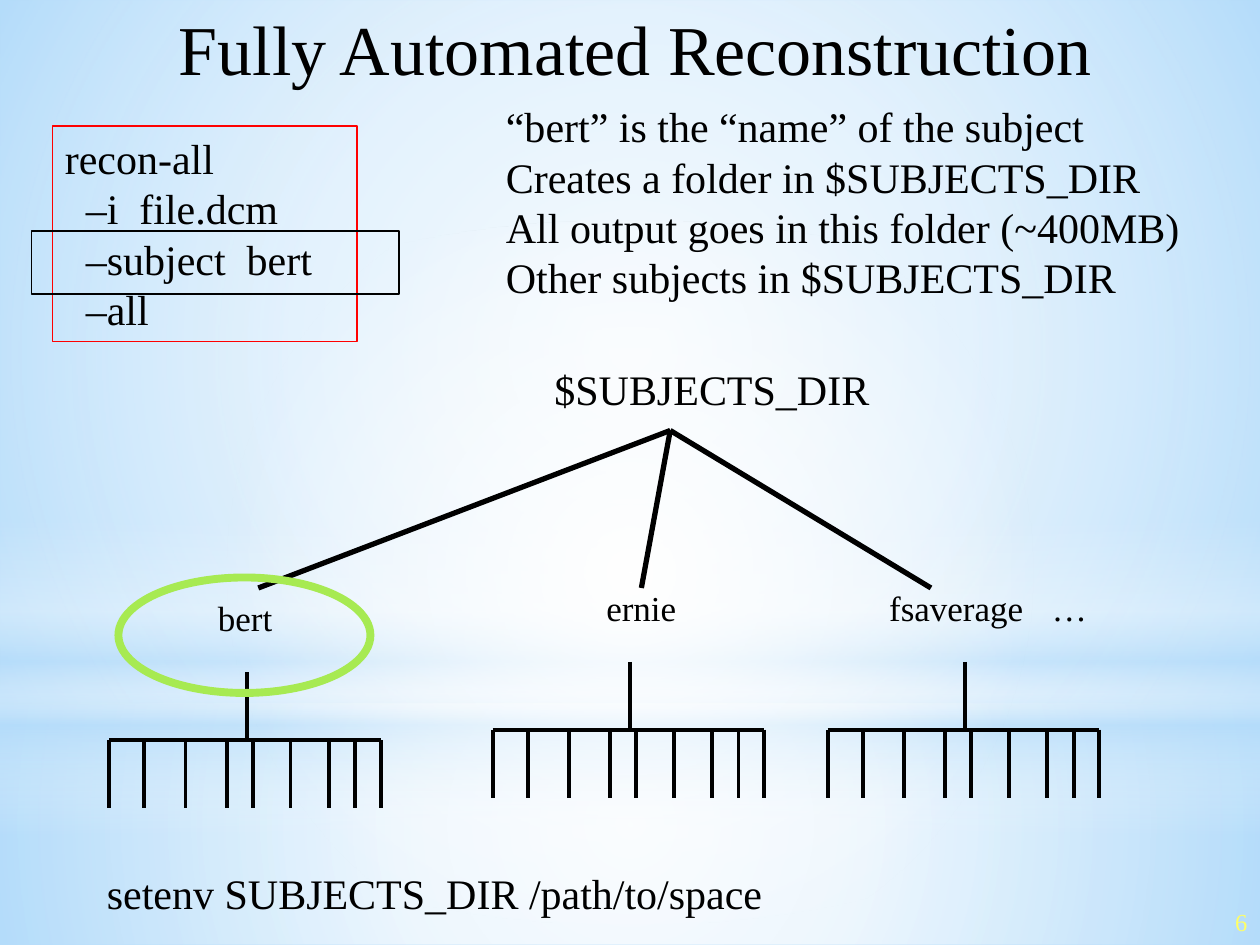
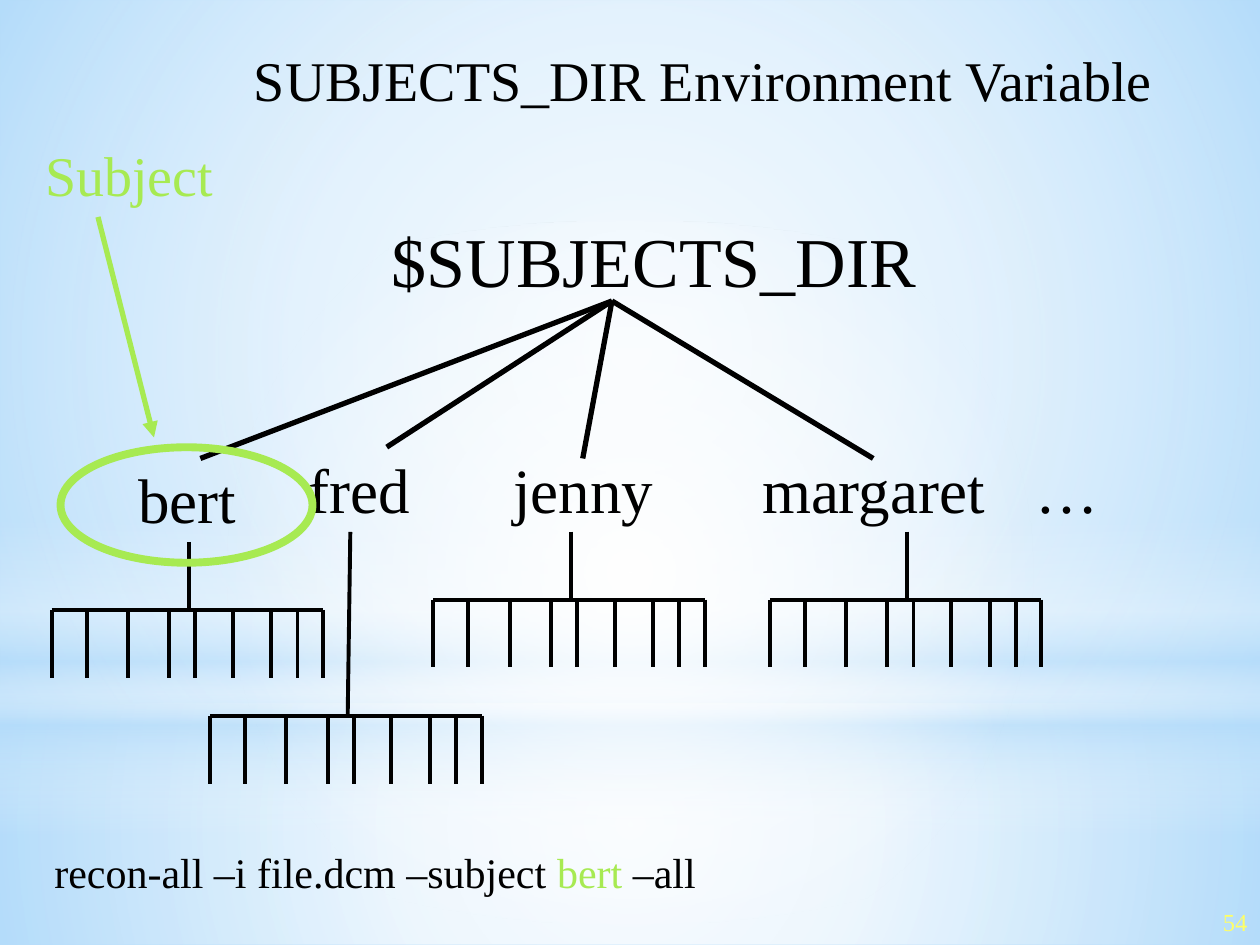
from lxml.etree import SubElement
from pptx import Presentation
from pptx.dml.color import RGBColor
from pptx.enum.shapes import MSO_CONNECTOR, MSO_SHAPE
from pptx.enum.text import MSO_ANCHOR as ANCHOR, MSO_AUTO_SIZE, PP_ALIGN as ALIGN
from pptx.oxml import parse_xml
from pptx.oxml.ns import nsdecls, qn
from pptx.util import Pt

COLORS = {
    "sky": "B4DCFA", "white": "FFFFFF", "ink": "000000",
    "red": "FF0000", "green": "A7EA52", "number": "FFFF66",
}
RGB = {name: RGBColor.from_string(value) for name, value in COLORS.items()}
FONT = "Times New Roman"
TITLE_ONLY = 5


def write(sp, lines, size, color="ink", align=ALIGN.LEFT, anchor=ANCHOR.TOP,
          spacing=None, tab=None):
    """Fill a shape with one paragraph per line; spacing defaults to 1.2 times the size."""
    tf = sp.text_frame
    tf.word_wrap = True
    tf.auto_size = MSO_AUTO_SIZE.NONE
    tf.vertical_anchor = anchor
    for i, line in enumerate(lines):
        p = tf.add_paragraph() if i else tf.paragraphs[0]
        p.text = line
        p.alignment = align
        p.line_spacing = spacing or Pt(size * 1.2)
        if tab:
            tabs = SubElement(p._p.get_or_add_pPr(), qn("a:tabLst"))
            SubElement(tabs, qn("a:tab"), pos=str(Pt(tab)), algn="l")
        p.font.name = FONT
        p.font.size = Pt(size)
        p.font.color.rgb = RGB[color]
    return tf


def add_line(slide, start, end, width, color="ink"):
    line = slide.shapes.add_connector(
        MSO_CONNECTOR.STRAIGHT, *[Pt(v) for v in (*start, *end)])
    line.line.color.rgb = RGB[color]
    line.line.width = Pt(width)
    SubElement(line._element.spPr, qn("a:effectLst"))
    return line


prs = Presentation()
prs.slide_width, prs.slide_height = Pt(720), Pt(540)
master = prs.slide_master
master.background.fill.solid()
master.background.fill.fore_color.rgb = RGB["sky"]

# Each glow: shape, box, direction, stops of (position %, colour, opacity %)
CENTER = ('<a:path path="circle"><a:fillToRect l="50000" t="50000" '
          'r="50000" b="50000"/></a:path>')
DOWN = '<a:lin ang="5400000" scaled="0"/>'
GLOWS = [
    (MSO_SHAPE.RECTANGLE, (0, 402, 720, 138), CENTER,
     [(0, "white", 91), (37, "white", 76), (100, "sky", 79)]),
    (MSO_SHAPE.RECTANGLE, (0, 0, 720, 402), CENTER,
     [(0, "white", 89), (48, "white", 62), (100, "sky", 79)]),
    (MSO_SHAPE.RECTANGLE, (0, 297, 720, 180), DOWN,
     [(0, "white", 0), (29, "white", 30), (45, "sky", 40),
      (55, "white", 26), (65, "sky", 60), (100, "white", 0)]),
    (MSO_SHAPE.OVAL, (0, 126, 720, 402), CENTER,
     [(0, "white", 100), (56, "white", 0)]),
]

# A comb of files hangs under each subject: tick offsets along its bar
TICKS = [0, 20, 43.5, 67, 82, 103.5, 125.5, 140.5, 155]
STEM_X, COMB_DROP = 78.5, 38.8

# Labels: text, box, alignment, tab stop. Combs: bar left, bar top, stem top.
SLIDES = [
    dict(
        title="Fully Automated Reconstruction", title_box=(78, -18, 570, 90),
        title_size=40, number="6",
        root_box=(244, 192, 325.5, 60), root_size=24, label_size=20,
        labels=[("bert", (89.3, 342, 101.5, 85), ALIGN.CENTER, None),
                ("ernie", (286.5, 336, 160, 36), ALIGN.CENTER, None),
                ("fsaverage\t…", (501, 336, 200, 36), ALIGN.LEFT, 93)],
        hub=(383, 246), branches=[(147.6, 336), (366.5, 336), (532, 336)],
        combs=[(62.5, 423, None), (281.5, 417, None), (473, 417, None)],
        ring=(67.7, 330, 144, 66),
    ),
    dict(
        title="SUBJECTS_DIR Environment Variable", title_box=(126, 0, 552, 90),
        title_size=32, number="54",
        root_box=(211, 118, 325.5, 60), root_size=40, label_size=36,
        labels=[("bert", (56.2, 268, 101.5, 85), ALIGN.CENTER, None),
                ("fred", (125.3, 262, 160, 36), ALIGN.CENTER, None),
                ("jenny", (253.4, 262, 160, 36), ALIGN.CENTER, None),
                ("margaret\t…", (428.4, 262, 240, 36), ALIGN.LEFT, 156)],
        hub=(349.7, 172),
        branches=[(114.5, 262), (221, 255.5), (333, 262), (499, 262)],
        combs=[(29.5, 348.5, None), (247.7, 342.6, None), (440, 342.6, None),
               (120.2, 409, (200.2, 304))],
        ring=(34.6, 255.6, 144, 66),
    ),
]

slides = []
for content in SLIDES:
    s = prs.slides.add_slide(prs.slide_layouts[TITLE_ONLY])
    slides.append(s)

    title = s.shapes.title
    title.left, title.top, title.width, title.height = [
        Pt(v) for v in content["title_box"]]
    write(title, [content["title"]], content["title_size"],
          align=ALIGN.CENTER, anchor=ANCHOR.MIDDLE)

    number = s.shapes.add_textbox(Pt(570), Pt(515), Pt(150), Pt(36))
    write(number, [content["number"]], 14, "number", ALIGN.RIGHT)

    root = s.shapes.add_textbox(*[Pt(v) for v in content["root_box"]])
    write(root, ["$SUBJECTS_DIR"], content["root_size"],
          align=ALIGN.CENTER, anchor=ANCHOR.MIDDLE)

    for label, box, align, tab in content["labels"]:
        sp = s.shapes.add_textbox(*[Pt(v) for v in box])
        write(sp, [label], content["label_size"], align=align, spacing=0.8, tab=tab)

    for end in content["branches"]:
        add_line(s, content["hub"], end, 3)

    for left, top, stem_top in content["combs"]:
        stem = (left + STEM_X, top)
        add_line(s, stem_top or (stem[0], top - COMB_DROP), stem, 2.25)
        add_line(s, (left, top), (left + TICKS[-1], top), 2.25)
        for tick in TICKS:
            add_line(s, (left + tick, top), (left + tick, top + COMB_DROP), 2.25)

    ring = s.shapes.add_shape(MSO_SHAPE.OVAL, *[Pt(v) for v in content["ring"]])
    ring.shadow.inherit = False
    ring.fill.background()
    ring.line.color.rgb = RGB["green"]
    ring.line.width = Pt(4.5)

reconstruction, variable = slides

# The glows are built on a slide, then moved behind everything on the master
for i, (kind, box, direction, stops) in enumerate(GLOWS):
    sp = reconstruction.shapes.add_shape(kind, *[Pt(v) for v in box])
    sp.shadow.inherit = False
    sp.line.fill.background()
    stops_xml = "".join(
        f'<a:gs pos="{pos * 1000}"><a:srgbClr val="{COLORS[color]}">'
        f'<a:alpha val="{alpha * 1000}"/></a:srgbClr></a:gs>'
        for pos, color, alpha in stops)
    gradient = parse_xml(
        f'<a:gradFill {nsdecls("a")} rotWithShape="1">'
        f'<a:gsLst>{stops_xml}</a:gsLst>{direction}</a:gradFill>')
    sp._element.spPr.find(qn("a:prstGeom")).addnext(gradient)
    sp._element.nvSpPr.cNvPr.set("id", str(100 + i))
    master.shapes._spTree.insert(2 + i, sp._element)

# Fully Automated Reconstruction
command = reconstruction.shapes.add_shape(
    MSO_SHAPE.RECTANGLE, Pt(30), Pt(72), Pt(174), Pt(123))
highlight = reconstruction.shapes.add_shape(
    MSO_SHAPE.RECTANGLE, Pt(18), Pt(132), Pt(210), Pt(36))
for sp, color in ((command, "red"), (highlight, "ink")):
    sp.shadow.inherit = False
    sp.fill.background()
    sp.line.color.rgb = RGB[color]
    sp.line.width = Pt(0.75)
write(command, ["recon-all", "  –i  file.dcm", "  –subject  bert", "  –all"], 24)

notes = reconstruction.shapes.add_textbox(Pt(282), Pt(54), Pt(414), Pt(124))
write(notes, ["“bert” is the “name” of the subject",
              "Creates a folder in $SUBJECTS_DIR",
              "All output goes in this folder (~400MB)",
              "Other subjects in $SUBJECTS_DIR"], 24)

setenv = reconstruction.shapes.add_textbox(Pt(54), Pt(492), Pt(393), Pt(37))
write(setenv, ["setenv SUBJECTS_DIR /path/to/space"], 24)

# SUBJECTS_DIR Environment Variable
arrow = add_line(variable, (56, 124), (88, 250), 3, "green")
SubElement(arrow.line._get_or_add_ln(), qn("a:tailEnd"), type="triangle")

subject = variable.shapes.add_textbox(Pt(18.7), Pt(76.5), Pt(112), Pt(46))
write(subject, ["Subject"], 32, "green")

recon = variable.shapes.add_textbox(Pt(24), Pt(480), Pt(402), Pt(36))
p = write(recon, ["recon-all –i file.dcm –subject "], 24).paragraphs[0]
for text, color in (("bert ", "green"), ("–all", "ink")):
    r = p.add_run()
    r.text = text
    r.font.color.rgb = RGB[color]

prs.save("out.pptx")
